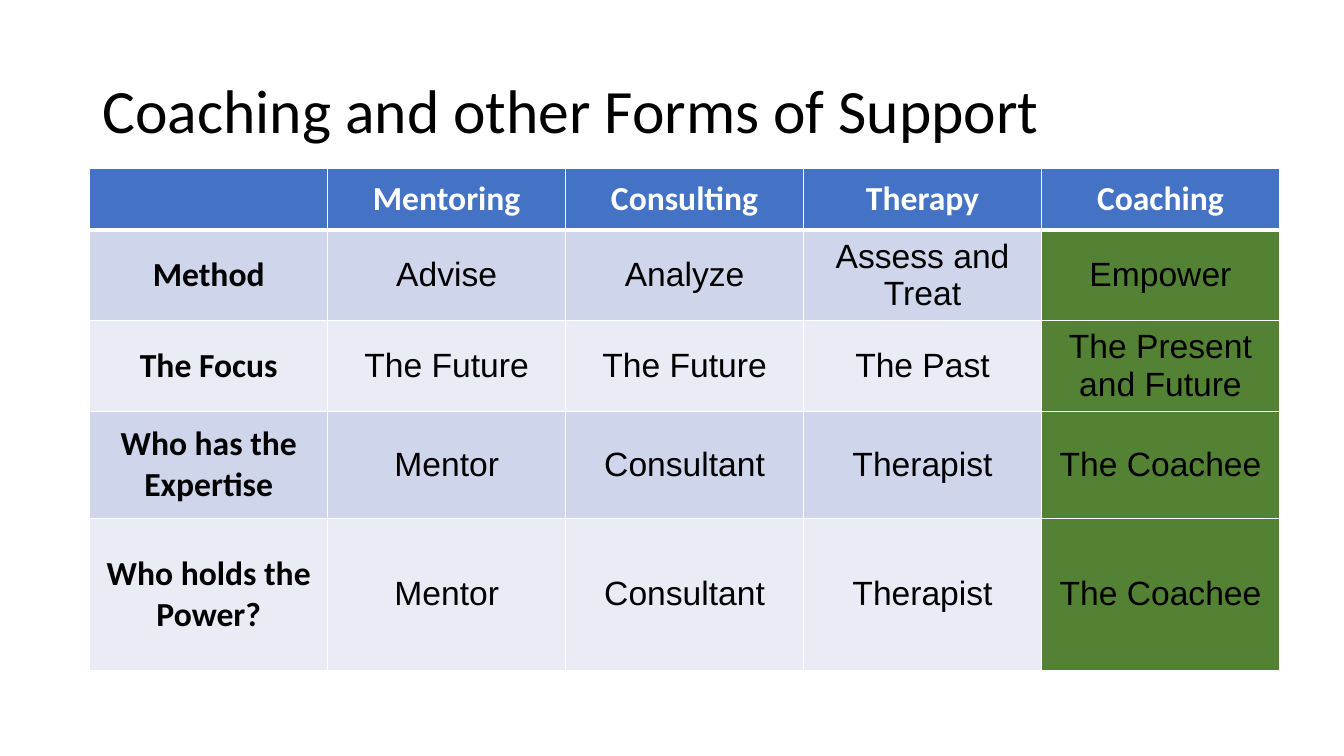
from lxml import etree
from pptx import Presentation
from pptx.dml.color import RGBColor
from pptx.enum.text import MSO_ANCHOR, PP_ALIGN
from pptx.oxml.ns import qn
from pptx.util import Inches, Pt

MIDDLE = MSO_ANCHOR.MIDDLE
CENTER = PP_ALIGN.CENTER

WHITE, BLACK = "FFFFFF", "000000"
HEADER_BLUE, COACHING_GREEN = "4472C4", "548235"
BANDS = ("CFD5EA", "E9EBF5")

COMPARISON = [
    ["", "Mentoring", "Consulting", "Therapy", "Coaching"],
    ["Method", "Advise", "Analyze", "Assess and Treat", "Empower"],
    ["The Focus", "The Future", "The Future", "The Past", "The Present and Future"],
    ["Who has the Expertise", "Mentor", "Consultant", "Therapist", "The Coachee"],
    ["Who holds the Power?", "Mentor", "Consultant", "Therapist", "The Coachee"],
]
ROW_HEIGHTS = (0.61, 0.88, 0.88, 1.06, 1.51)


def color(hex_string):
    return RGBColor.from_string(hex_string)


def add_run(paragraph, text, size, font, ink, bold=False):
    run = paragraph.add_run()
    run.text = text
    run.font.size = Pt(size)
    run.font.name = font
    run.font.bold = bold
    run.font.color.rgb = color(ink)


def set_borders(cell, widths):
    """Draw white cell borders; widths are points for left, right, top, bottom."""
    properties = cell._tc.get_or_add_tcPr()
    for side, width in zip("LRTB", widths):
        line = etree.SubElement(properties, qn(f"a:ln{side}"), w=str(Pt(width)))
        fill = etree.SubElement(line, qn("a:solidFill"))
        etree.SubElement(fill, qn("a:srgbClr"), val=WHITE)


def add_title(slide, left, top, width, height):
    frame = slide.shapes.add_textbox(
        Inches(left), Inches(top), Inches(width), Inches(height)).text_frame
    frame.word_wrap = True
    frame.vertical_anchor = MIDDLE
    heading = frame.paragraphs[0]
    heading.line_spacing = 0.9
    add_run(heading, "Coaching and other Forms of Support", 44, "Calibri", BLACK)


def cell_fill(row, column):
    if row == 0:
        return HEADER_BLUE
    if column == len(COMPARISON[0]) - 1:
        return COACHING_GREEN
    return BANDS[(row - 1) % 2]


def add_comparison(slide, left, top, width, height):
    column_count = len(COMPARISON[0])
    table = slide.shapes.add_table(
        len(COMPARISON), column_count,
        Inches(left), Inches(top), Inches(width), Inches(height)).table
    for column in table.columns:
        column.width = Inches(width / column_count)
    for row, row_height in zip(table.rows, ROW_HEIGHTS):
        row.height = Inches(height * row_height / sum(ROW_HEIGHTS))

    for r, entries in enumerate(COMPARISON):
        for c, entry in enumerate(entries):
            cell = table.cell(r, c)
            # A thick rule separates the header from the body
            set_borders(cell, (1, 1, 3 if r == 1 else 1, 3 if r == 0 else 1))
            cell.fill.solid()
            cell.fill.fore_color.rgb = color(cell_fill(r, c))
            cell.vertical_anchor = MIDDLE
            paragraph = cell.text_frame.paragraphs[0]
            paragraph.alignment = CENTER
            if entry:
                is_label = r == 0 or c == 0
                add_run(paragraph, entry, 24, "Calibri" if is_label else "Arial",
                        WHITE if r == 0 else BLACK, is_label)


def main():
    deck = Presentation()
    deck.slide_width, deck.slide_height = Inches(13.33), Inches(7.5)
    slide = deck.slides.add_slide(deck.slide_layouts[6])
    add_title(slide, 0.92, 0.4, 11.5, 1.45)
    add_comparison(slide, 0.89, 1.67, 11.8, 4.94)
    deck.save("out.pptx")


if __name__ == "__main__":
    main()
